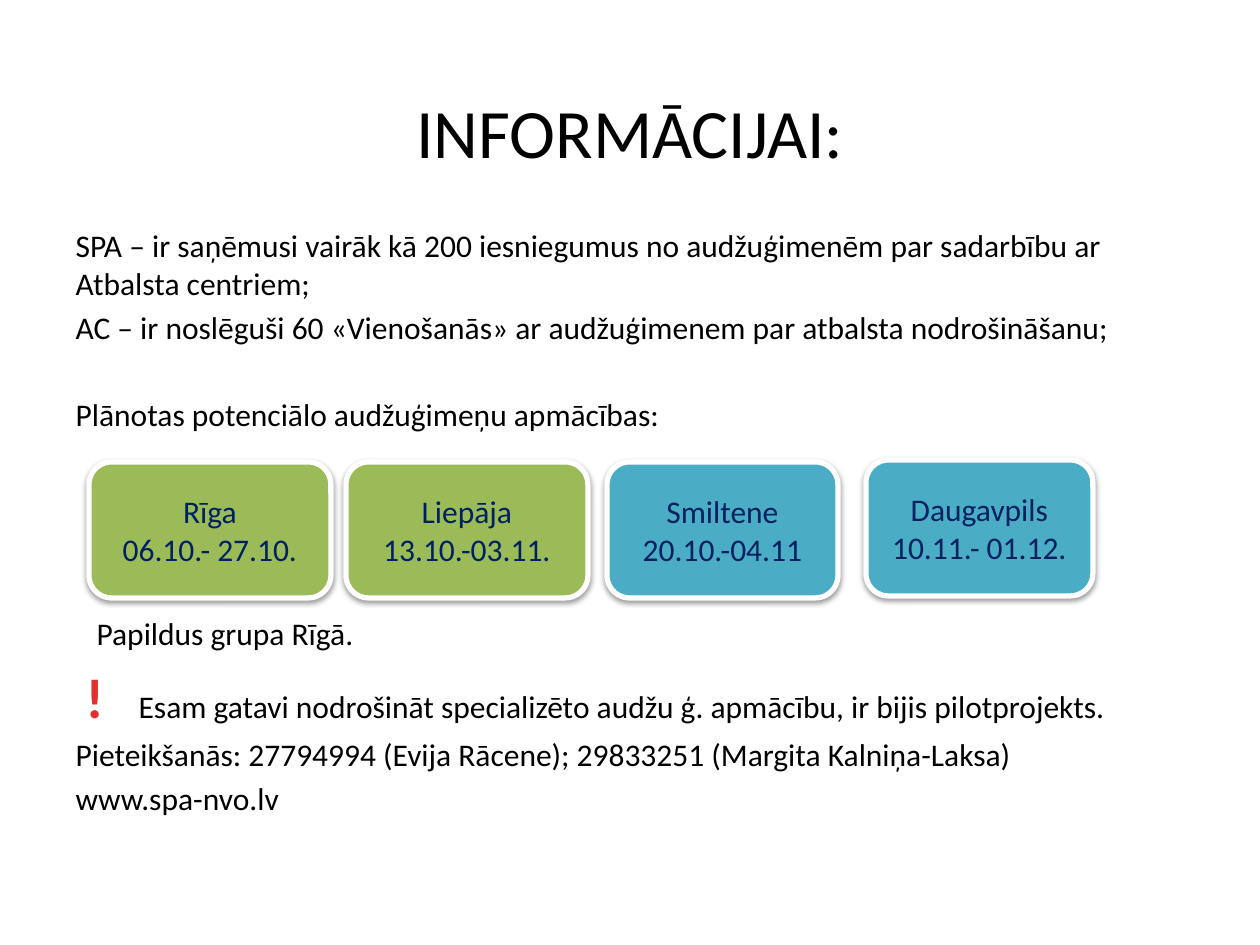
from lxml import etree
from pptx import Presentation
from pptx import util as u
from pptx.dml.color import RGBColor
from pptx.enum import shapes, text
from pptx.oxml import ns

PX = 914400 / 126
HUES = {"ink": "000000", "navy": "002060", "green": "9BBB59", "teal": "4BACC6",
        "white": "FFFFFF", "red": "E0322D", "dark": "A2201C"}
FACE = "Calibri"

# text, space before in pt, first-line indent in px
LINES = [
    ("SPA – ir saņēmusi vairāk kā 200 iesniegumus no audžuģimenēm par sadarbību "
     "ar Atbalsta centriem;", 0, 0),
    ("AC – ir noslēguši 60 «Vienošanās» ar audžuģimenem par atbalsta nodrošināšanu;", 3.2, 0),
    ("Plānotas potenciālo audžuģimeņu apmācības:", 28.3, 0),
    ("Papildus grupa Rīgā.", 103.7, 21),
    ("!\tEsam gatavi nodrošināt specializēto audžu ģ. apmācību, ir bijis pilotprojekts.", 6, 10),
    ("Pieteikšanās: 27794994 (Evija Rācene); 29833251 (Margita Kalniņa-Laksa)", 3.2, 0),
    ("www.spa-nvo.lv", 3.2, 0),
]
# town, dates, fill, box in px relative to the row
TOWNS = [
    ("Rīga", "06.10.- 27.10.", "green", (0, 2, 242, 136)),
    ("Liepāja", "13.10.-03.11.", "green", (257, 2, 242, 136)),
    ("Smiltene", "20.10.-04.11", "teal", (518, 2, 231, 136)),
    ("Daugavpils", "10.11.- 01.12.", "teal", (777, 0, 227, 136)),
]


def emu(px):
    return u.Emu(round(px * PX))


def hue(name):
    return RGBColor.from_string(HUES[name])


def put(shape, box):
    for key, px in zip(("left", "top", "width", "height"), box):
        setattr(shape, key, emu(px))


def style(font, size, ink="ink", bold=False):
    for key, val in {"name": FACE, "size": u.Pt(size), "bold": bold}.items():
        setattr(font, key, val)
    font.color.rgb = hue(ink)


def sub(node, tag, **attrs):
    return etree.SubElement(node, ns.qn(tag), {k: str(v) for k, v in attrs.items()})


def title(shape, box):
    put(shape, box)
    frame = shape.text_frame
    frame.text = "INFORMĀCIJAI:"
    frame.vertical_anchor = text.MSO_ANCHOR.MIDDLE
    para = frame.paragraphs[0]
    para.alignment = text.PP_ALIGN.CENTER
    style(para.runs[0].font, 39.6)


def mark(run):
    """Turn a run into the large red exclamation mark."""
    style(run.font, 32, "red", True)
    fill = run.font.fill
    fill.gradient()
    fill.gradient_angle = 270
    for stop, pos, name in zip(fill.gradient_stops, (0.25, 1), ("red", "dark")):
        stop.position = pos
        stop.color.rgb = hue(name)
    run.font._element.set("spc", "50")


def body(shape, box):
    put(shape, box)
    frame = shape.text_frame
    frame.auto_size = text.MSO_AUTO_SIZE.NONE
    for i, (words, gap, dent) in enumerate(LINES):
        para = frame.paragraphs[0] if i == 0 else frame.add_paragraph()
        props = para._p.get_or_add_pPr()
        props.set("marL", "0")
        props.set("indent", str(emu(dent)))
        sub(props, "a:buNone")
        head, tab, tail = words.partition("\t")
        if tab:
            sub(sub(props, "a:tabLst"), "a:tab", pos=emu(57), algn="l")
        para.space_before = u.Pt(gap)
        run = para.add_run()
        run.text = head
        style(run.font, 18)
        if tab:
            mark(run)
            rest = para.add_run()
            rest.text = tab + tail
            style(rest.font, 18)


def shade(shape):
    """Give a soft shadow that falls straight down."""
    shape.shadow.inherit = False
    effects = shape._element.spPr.find(ns.qn("a:effectLst"))
    soft = sub(effects, "a:outerShdw", blurRad=40000, dist=20000, dir=5400000, rotWithShape=0)
    sub(sub(soft, "a:srgbClr", val=HUES["ink"]), "a:alpha", val=38000)


def towns(slide, left, top):
    for town, dates, fill, (x, y, w, h) in TOWNS:
        card = slide.shapes.add_shape(shapes.MSO_SHAPE.ROUNDED_RECTANGLE,
                                      *map(emu, (left + x, top + y, w, h)))
        card.fill.solid()
        card.fill.fore_color.rgb = hue(fill)
        card.line.color.rgb = hue("white")
        card.line.width = u.Pt(3)
        shade(card)
        frame = card.text_frame
        frame.text = f"{town}\n{dates}"
        frame.word_wrap = True
        frame.vertical_anchor = text.MSO_ANCHOR.MIDDLE
        for para in frame.paragraphs:
            para.alignment = text.PP_ALIGN.CENTER
            style(para.runs[0].font, 18, "navy")


def main():
    deck = Presentation()
    deck.slide_width, deck.slide_height = emu(1260), emu(945)
    slide = deck.slides.add_slide(deck.slide_layouts[1])
    title(slide.shapes.title, (63, 84, 1134, 94))
    body(slide.placeholders[1], (63, 220, 1134, 624))
    towns(slide, 89, 460)
    deck.save("out.pptx")


if __name__ == "__main__":
    main()
